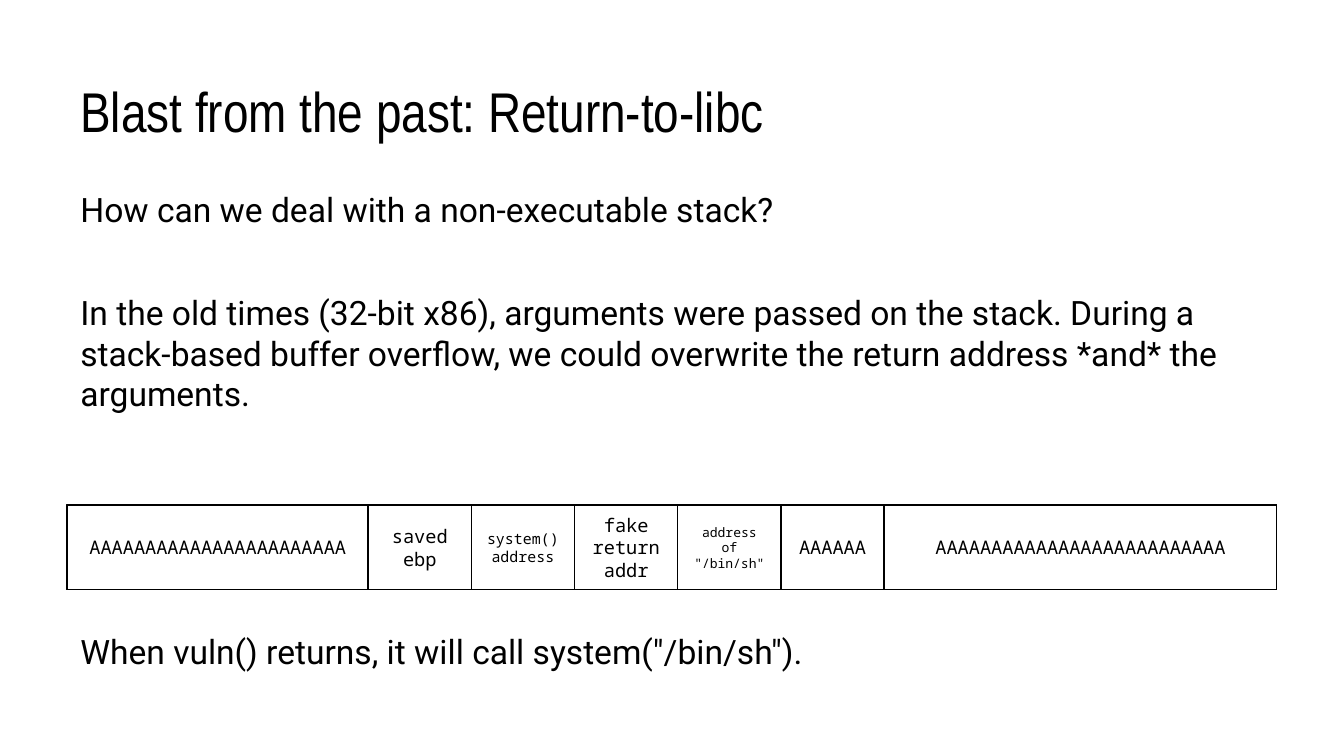
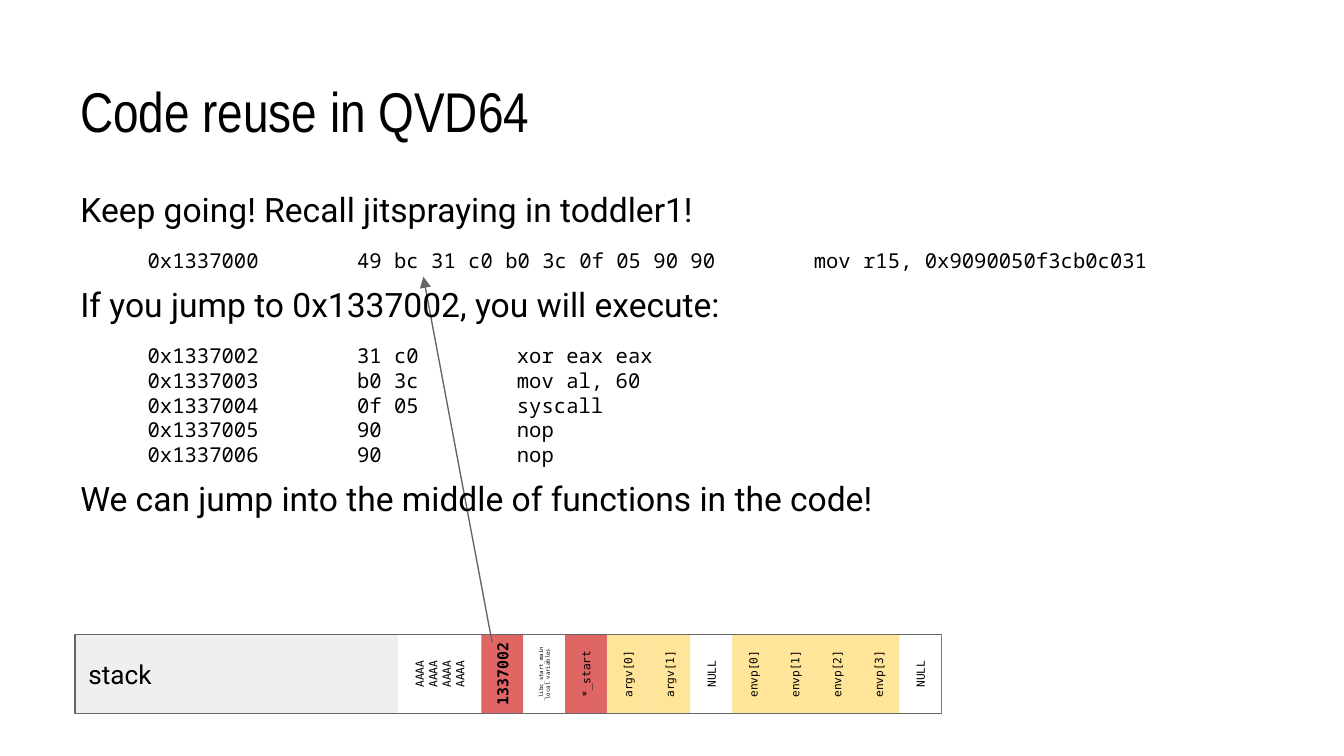
"""Build two slides on code reuse: return-to-libc and jumping into QVD64 code."""
from lxml.etree import SubElement
from pptx import Presentation
from pptx.dml.color import RGBColor
from pptx.enum.shapes import MSO_CONNECTOR as Connector, MSO_SHAPE as Shape
from pptx.enum.text import MSO_ANCHOR as Anchor, PP_ALIGN as Align
from pptx.oxml.ns import qn
from pptx.util import Cm, Pt

paint = RGBColor.from_string
BLACK, WHITE, GREY, PALE = "000000", "FFFFFF", "666666", "EFEFEF"
RED, YELLOW = "E06666", "FFE599"
TITLE_FONT, BODY_FONT = "Arial Narrow", "Roboto"
CODE_FONT, STACK_FONT = "Noto Sans Mono", "DejaVu Sans Mono"
MARGIN, CONTENT_WIDTH = 1.27, 22.86
CODE_TABS = (1.27, 5.23, 8.25, 13.86)


def write(shape, rows, anchor=Anchor.TOP, align=Align.LEFT, inset=0.25, bold=False):
    """Fill a shape with rows of (text, size, font, space before)."""
    frame = shape.text_frame
    frame.word_wrap = True
    frame.vertical_anchor = anchor
    frame.margin_left = frame.margin_right = Cm(inset)
    frame.margin_top = frame.margin_bottom = Cm(inset)
    for index, (text, size, font, before) in enumerate(rows):
        paragraph = frame.add_paragraph() if index else frame.paragraphs[0]
        paragraph.text = text
        paragraph.alignment = align
        paragraph.space_before = Pt(before)
        for run in paragraph.runs:
            run.font.size = Pt(size)
            run.font.name = font
            run.font.bold = bold
            run.font.color.rgb = paint(BLACK)
        if "\t" in text:
            tab_list = SubElement(paragraph._p.get_or_add_pPr(), qn("a:tabLst"))
            for stop in CODE_TABS:
                SubElement(tab_list, qn("a:tab"), pos=str(Cm(stop)), algn="l")


def add_box(slide, left, top, width, height, fill=None, line=None):
    """Add a flat rectangle with an optional fill and outline."""
    box = slide.shapes.add_shape(
        Shape.RECTANGLE, Cm(left), Cm(top), Cm(width), Cm(height))
    box.shadow.inherit = False
    if fill:
        box.fill.solid()
        box.fill.fore_color.rgb = paint(fill)
    else:
        box.fill.background()
    if line:
        box.line.color.rgb = paint(line)
        box.line.width = Pt(0.75)
    else:
        box.line.fill.background()
    return box


presentation = Presentation()
presentation.slide_width = Cm(25.4)
presentation.slide_height = Cm(14.29)

slides = []
for title in ("Blast from the past: Return-to-libc", "Code reuse in QVD64"):
    slide = presentation.slides.add_slide(presentation.slide_layouts[6])
    slide.background.fill.solid()
    slide.background.fill.fore_color.rgb = paint(WHITE)
    title_box = slide.shapes.add_textbox(
        Cm(MARGIN), Cm(0.58), Cm(CONTENT_WIDTH), Cm(2.39))
    write(title_box, [(title, 30, TITLE_FONT, 0)], Anchor.BOTTOM)
    slides.append(slide)
libc_slide, reuse_slide = slides

BUFFER_TOP, BUFFER_HEIGHT = 9.55, 1.6
buffer_cells = [
    ("A" * 23, 5.69, 10),
    ("saved ebp", 1.95, 10),
    ("system() address", 1.95, 8),
    ("fake return addr", 1.95, 10),
    ('address of "/bin/sh"', 1.95, 7),
    ("A" * 6, 1.95, 10),
    ("A" * 26, 7.42, 10),
]
add_box(libc_slide, MARGIN, BUFFER_TOP, CONTENT_WIDTH, BUFFER_HEIGHT, line=BLACK)
left = MARGIN
for text, width, size in buffer_cells:
    cell = add_box(libc_slide, left, BUFFER_TOP, width, BUFFER_HEIGHT, line=BLACK)
    write(cell, [(text, size, CODE_FONT, 0)], Anchor.MIDDLE, Align.CENTER)
    left += width

stack = add_box(reuse_slide, 1.42, 11.99, 16.38, 1.5, PALE, GREY)
write(stack, [("stack", 14, BODY_FONT, 0)], Anchor.MIDDLE)

SLOT_WIDTH, SLOT_HEIGHT, SLOT_MIDDLE = 0.79, 1.47, 12.74
stack_cells = [
    (["AAAA"] * 4, WHITE, 6, 2),
    (["1337002"], RED, 8, 1),
    (["_libc_start_main", "local variables"], WHITE, 3, 1),
    (["*_start"], RED, 6, 1),
    *[([f"argv[{index}]"], YELLOW, 6, 1) for index in range(2)],
    (["NULL"], WHITE, 6, 1),
    *[([f"envp[{index}]"], YELLOW, 6, 1) for index in range(4)],
    (["NULL"], WHITE, 6, 1),
]
left = 7.52
for lines, fill, size, slots in stack_cells:
    width = slots * SLOT_WIDTH
    cell = add_box(reuse_slide, left + (width - SLOT_HEIGHT) / 2,
                   SLOT_MIDDLE - width / 2, SLOT_HEIGHT, width, fill)
    cell.rotation = 270
    write(cell, [(line, size, STACK_FONT, 0) for line in lines],
          Anchor.MIDDLE, Align.CENTER, 0, lines == ["1337002"])
    left += width

jump = reuse_slide.shapes.add_connector(
    Connector.STRAIGHT, Cm(9.3), Cm(12.14), Cm(8), Cm(5.23))
jump.line.color.rgb = paint(GREY)
jump.line.width = Pt(0.75)
SubElement(jump.line._get_or_add_ln(), qn("a:tailEnd"), type="triangle")
SubElement(jump._element.spPr, qn("a:effectLst"))

libc_body = [
    ("How can we deal with a non-executable stack?", 18, BODY_FONT, 0),
    ("In the old times (32-bit x86), arguments were passed on the stack. "
     "During a stack-based buffer overflow, we could overwrite the return "
     "address *and* the arguments.", 18, BODY_FONT, 33.6),
    ('When vuln() returns, it will call system("/bin/sh").', 18, BODY_FONT, 116.4),
]
reuse_body = [
    ("Keep going! Recall jitspraying in toddler1!", 18, BODY_FONT, 0),
    ("\t0x1337000\t49 bc 31 c0 b0 3c 0f 05 90 90\tmov r15, 0x9090050f3cb0c031",
     11, CODE_FONT, 10),
    ("If you jump to 0x1337002, you will execute:", 18, BODY_FONT, 6),
    ("\t0x1337002\t31 c0\txor eax eax", 11, CODE_FONT, 10),
    ("\t0x1337003\tb0 3c\tmov al, 60", 11, CODE_FONT, 0),
    ("\t0x1337004\t0f 05\tsyscall", 11, CODE_FONT, 0),
    ("\t0x1337005\t90\tnop", 11, CODE_FONT, 0),
    ("\t0x1337006\t90\tnop", 11, CODE_FONT, 0),
    ("We can jump into the middle of functions in the code!", 18, BODY_FONT, 6),
]
for slide, rows in zip(slides, (libc_body, reuse_body)):
    body = slide.shapes.add_textbox(
        Cm(MARGIN), Cm(3.33), Cm(CONTENT_WIDTH), Cm(10.34))
    write(body, rows)

presentation.save("out.pptx")
